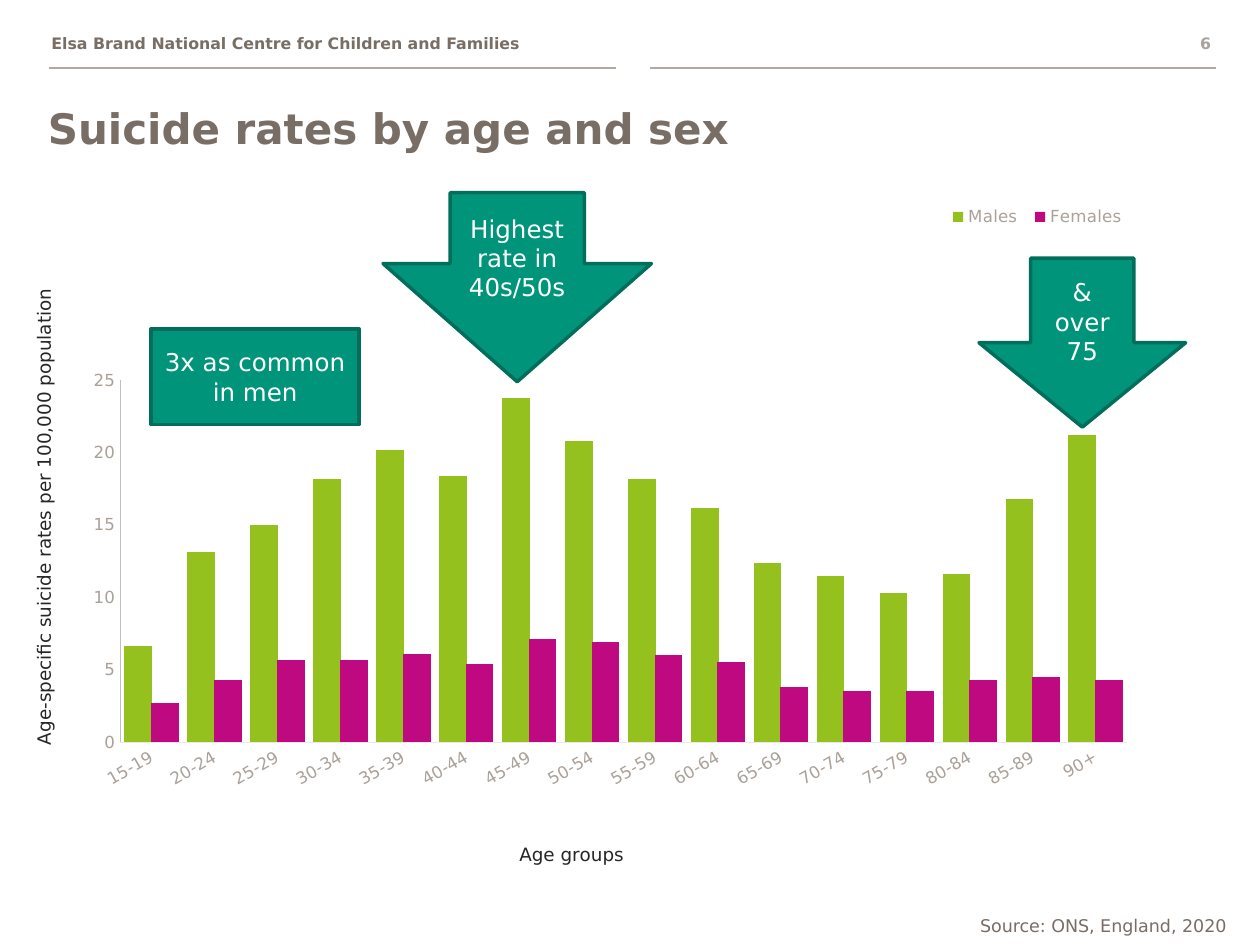
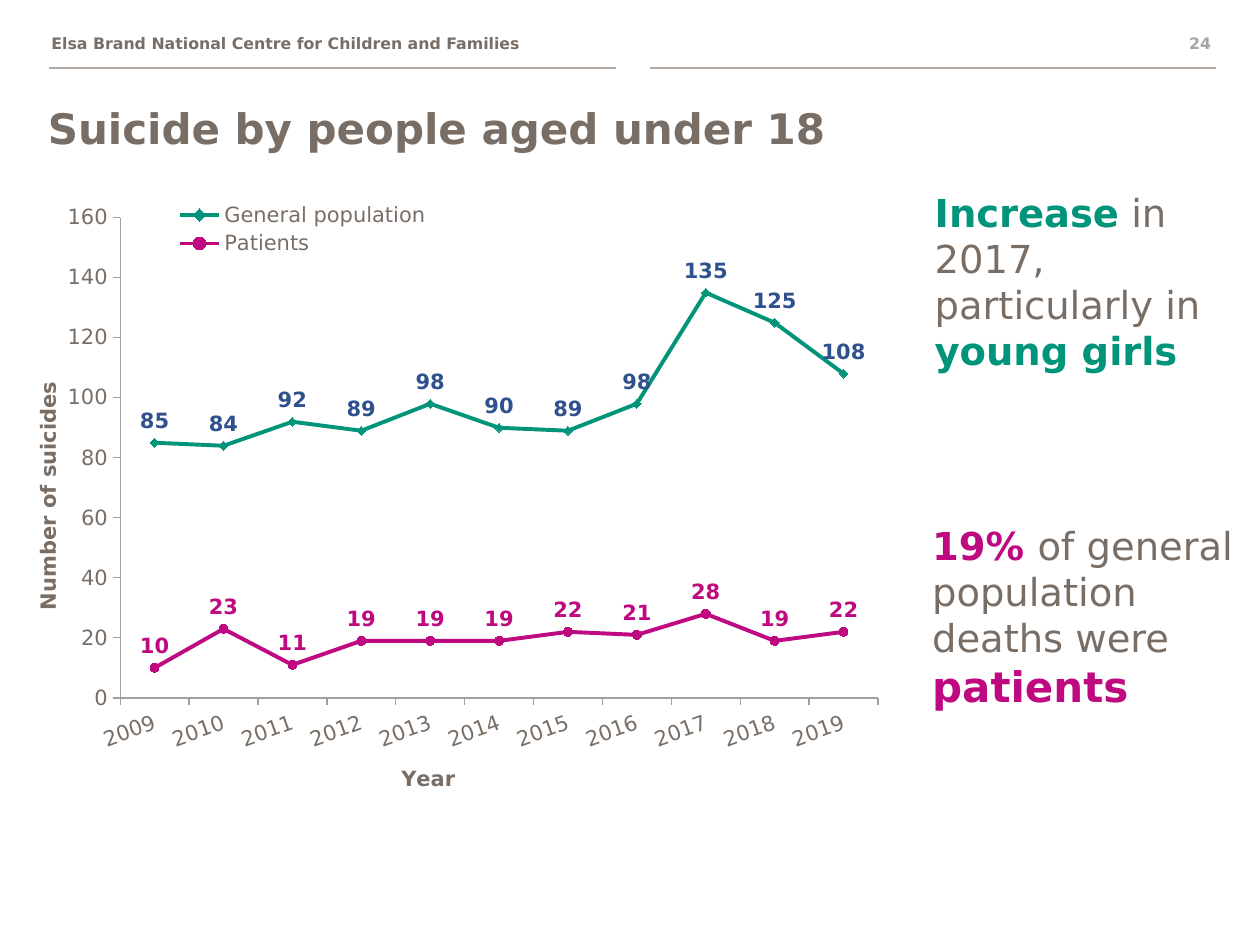
from dataclasses import dataclass

from lxml.etree import SubElement
from pptx import Presentation
from pptx.chart.data import CategoryChartData
from pptx.dml.color import RGBColor
from pptx.enum.chart import (XL_CHART_TYPE, XL_LABEL_POSITION, XL_LEGEND_POSITION,
                             XL_MARKER_STYLE, XL_TICK_MARK)
from pptx.enum.shapes import MSO_CONNECTOR, MSO_SHAPE
from pptx.enum.text import MSO_ANCHOR, PP_ALIGN
from pptx.oxml import parse_xml
from pptx.oxml.ns import nsdecls, qn
from pptx.util import Inches, Pt


@dataclass(frozen=True)
class Theme:
    font: str = "DejaVu Sans"
    text: str = "796E65"
    rule: str = "B0A8A1"
    page_number: str = "A8A39F"
    tick_label: str = "AAA199"
    axis_title: str = "262626"
    pale_axis: str = "EBE9E7"
    value_axis: str = "BFBFBF"
    grey_axis: str = "A0A0A0"
    green: str = "00957A"
    dark_green: str = "006E5A"
    lime: str = "95C11F"
    magenta: str = "BE0980"
    blue: str = "2F528F"
    white: str = "FFFFFF"
    title_size: float = 24
    large_size: float = 24
    message_size: float = 22
    callout_size: float = 14
    line_chart_size: float = 12
    axis_title_size: float = 10.5
    source_size: float = 10
    bar_chart_size: float = 9.5
    header_size: float = 9


THEME = Theme()
ORGANISATION = "Elsa Brand National Centre for Children and Families"


def set_font(font, size, color, bold=False):
    font.name = THEME.font
    font.size = Pt(size)
    font.bold = bold
    font.color.rgb = RGBColor.from_string(color)


def set_line(line, color, width):
    line.color.rgb = RGBColor.from_string(color)
    line.width = Pt(width)


def add_text(slide, box, runs, align=PP_ALIGN.LEFT):
    """Add one wrapped paragraph; each run is (text, size, color, bold)."""
    text_box = slide.shapes.add_textbox(*map(Inches, box))
    text_box.text_frame.word_wrap = True
    paragraph = text_box.text_frame.paragraphs[0]
    paragraph.alignment = align
    for text, *style in runs:
        run = paragraph.add_run()
        run.text = text
        set_font(run.font, *style)


def add_rule(slide, left, right):
    y = Inches(0.54)
    rule = slide.shapes.add_connector(MSO_CONNECTOR.STRAIGHT, Inches(left), y, Inches(right), y)
    set_line(rule.line, THEME.rule, 1)
    SubElement(rule._element.spPr, qn("a:effectLst"))


def add_slide(presentation, title, number):
    """Add a slide with the shared header, page number and title."""
    slide = presentation.slides.add_slide(presentation.slide_layouts[5])
    add_rule(slide, 0.39, 4.89)
    add_rule(slide, 5.16, 9.65)
    add_text(slide, (0.31, 0.22, 4.48, 0.25),
             [(ORGANISATION, THEME.header_size, THEME.text, True)])
    add_text(slide, (9.13, 0.22, 0.58, 0.25),
             [(number, THEME.header_size, THEME.page_number, True)], PP_ALIGN.RIGHT)

    shape = slide.shapes.title
    shape.left, shape.top, shape.width, shape.height = map(Inches, (0.28, 0.76, 9, 0.76))
    shape.text_frame.text = title
    shape.text_frame.vertical_anchor = MSO_ANCHOR.TOP
    paragraph = shape.text_frame.paragraphs[0]
    paragraph.alignment = PP_ALIGN.LEFT
    set_font(paragraph.font, THEME.title_size, THEME.text, True)
    return slide


def add_callout(slide, kind, box, text, adjustments=()):
    shape = slide.shapes.add_shape(kind, *map(Inches, box))
    shape.shadow.inherit = False
    for index, value in enumerate(adjustments):
        shape.adjustments[index] = value
    shape.fill.solid()
    shape.fill.fore_color.rgb = RGBColor.from_string(THEME.green)
    set_line(shape.line, THEME.dark_green, 2)
    shape.text_frame.text = text
    shape.text_frame.word_wrap = True
    shape.text_frame.vertical_anchor = MSO_ANCHOR.MIDDLE
    paragraph = shape.text_frame.paragraphs[0]
    paragraph.alignment = PP_ALIGN.CENTER
    set_font(paragraph.font, THEME.callout_size, THEME.white)


def place_in_chart(element, index, target="", **fractions):
    """Give a chart part a manual layout, as fractions of the chart area."""
    for layout in element.findall(qn("c:layout")):
        element.remove(layout)
    inner = f'<c:layoutTarget val="{target}"/>' if target else ""
    modes = "".join(f'<c:{side}Mode val="edge"/>' for side in "xy")
    values = "".join(f'<c:{name} val="{value}"/>' for name, value in fractions.items())
    element.insert(index, parse_xml(
        f'<c:layout {nsdecls("c")}><c:manualLayout>{inner}{modes}{values}'
        "</c:manualLayout></c:layout>"))


def add_chart(slide, kind, box, categories, series, plot_area):
    data = CategoryChartData()
    data.categories = categories
    for name, values in series.items():
        data.add_series(name, values)
    chart = slide.shapes.add_chart(kind, *map(Inches, box), data).chart
    chart.has_title = False
    set_font(chart.font, THEME.source_size, THEME.text)
    chart.plots[0].vary_by_categories = False
    place_in_chart(chart._chartSpace.chart.plotArea, 0, "inner",
                   **dict(zip("xywh", plot_area)))
    return chart


def format_axis(axis, tick_mark, size, color, line_color, line_width, rotation=0):
    axis.has_major_gridlines = False
    axis.major_tick_mark = tick_mark
    axis.minor_tick_mark = XL_TICK_MARK.NONE
    set_line(axis.format.line, line_color, line_width)
    set_font(axis.tick_labels.font, size, color)
    axis._element.txPr.bodyPr.set("rot", str(rotation * 60000))


def set_scale(axis, maximum, step):
    axis.minimum_scale = 0
    axis.maximum_scale = maximum
    axis.major_unit = step


def title_axis(axis, text, style, x, y, rotation=0):
    frame = axis.axis_title.text_frame
    frame.text = text
    set_font(frame.paragraphs[0].font, *style)
    frame._txBody.bodyPr.set("rot", str(rotation * 60000))
    frame._txBody.bodyPr.set("vert", "horz")
    place_in_chart(axis.axis_title._element, 1, x=x, y=y)


def add_legend(chart, position, size, color, **fractions):
    chart.has_legend = True
    chart.legend.position = position
    chart.legend.include_in_layout = False
    set_font(chart.legend.font, size, color)
    place_in_chart(chart.legend._element, 1, **fractions)


def add_rates_chart(slide):
    ages = [f"{age}-{age + 4}" for age in range(15, 90, 5)] + ["90+"]
    rates = {
        "Males": (6.6, 13.1, 15, 18.2, 20.2, 18.4, 23.8, 20.8,
                  18.2, 16.2, 12.4, 11.5, 10.3, 11.6, 16.8, 21.2),
        "Females": (2.7, 4.3, 5.7, 5.7, 6.1, 5.4, 7.1, 6.9,
                    6, 5.5, 3.8, 3.5, 3.5, 4.3, 4.5, 4.3),
    }
    chart = add_chart(slide, XL_CHART_TYPE.COLUMN_CLUSTERED, (0, 1.56, 9, 5.42),
                      ages, rates, (0.106, 0.269, 0.888, 0.53))
    plot = chart.plots[0]
    plot.gap_width, plot.overlap = 31, 4
    for series, color in zip(plot.series, (THEME.lime, THEME.magenta)):
        series.format.fill.solid()
        series.format.fill.fore_color.rgb = RGBColor.from_string(color)

    labels = THEME.bar_chart_size, THEME.tick_label
    format_axis(chart.category_axis, XL_TICK_MARK.NONE, *labels, THEME.pale_axis, 0.59, -30)
    format_axis(chart.value_axis, XL_TICK_MARK.NONE, *labels, THEME.value_axis, 0.75)
    set_scale(chart.value_axis, 25, 5)
    style = THEME.axis_title_size, THEME.axis_title
    title_axis(chart.category_axis, "Age groups", style, 0.455, 0.94)
    title_axis(chart.value_axis, "Age-specific suicide rates per 100,000 population",
               style, 0.025, 0.13, -90)
    add_legend(chart, XL_LEGEND_POSITION.BOTTOM, *labels, x=0.83, y=0.01, w=0.17, h=0.04)


def add_deaths_chart(slide):
    years = [str(year) for year in range(2009, 2020)]
    deaths = {
        "General population": (85, 84, 92, 89, 98, 90, 89, 98, 135, 125, 108),
        "Patients": (10, 23, 11, 19, 19, 19, 22, 21, 28, 19, 22),
    }
    chart = add_chart(slide, XL_CHART_TYPE.LINE_MARKERS, (0, 1.53, 7.17, 4.82),
                      years, deaths, (0.133, 0.041, 0.839, 0.791))
    size = THEME.line_chart_size
    styles = ((THEME.green, THEME.blue, XL_MARKER_STYLE.DIAMOND),
              (THEME.magenta, THEME.magenta, XL_MARKER_STYLE.CIRCLE))
    for series, (color, label_color, marker) in zip(chart.plots[0].series, styles):
        series.smooth = False
        set_line(series.format.line, color, 2.25)
        series.marker.style = marker
        series.marker.size = 5
        series.marker.format.fill.solid()
        series.marker.format.fill.fore_color.rgb = RGBColor.from_string(color)
        set_line(series.marker.format.line, color, 0.75)
        series.data_labels.show_value = True
        series.data_labels.position = XL_LABEL_POSITION.ABOVE
        set_font(series.data_labels.font, size, label_color, True)

    for axis, rotation in ((chart.category_axis, -20), (chart.value_axis, 0)):
        format_axis(axis, XL_TICK_MARK.OUTSIDE, size, THEME.text, THEME.grey_axis, 0.75, rotation)
    set_scale(chart.value_axis, 160, 20)
    style = size, THEME.text, True
    title_axis(chart.category_axis, "Year", style, 0.44, 0.935)
    title_axis(chart.value_axis, "Number of suicides", style, 0.033, 0.305, -90)
    add_legend(chart, XL_LEGEND_POSITION.RIGHT, size, THEME.text, x=0.17, y=0.01, w=0.33, h=0.1)


def build_rates_slide(presentation):
    slide = add_slide(presentation, "Suicide rates by age and sex", "6")
    add_rates_chart(slide)
    add_callout(slide, MSO_SHAPE.RECTANGLE, (1.2, 2.61, 1.65, 0.76), "3x as common in men")
    add_callout(slide, MSO_SHAPE.DOWN_ARROW, (3.04, 1.53, 2.13, 1.5),
                "Highest rate in 40s/50s", (0.5, 0.625))
    add_callout(slide, MSO_SHAPE.DOWN_ARROW, (7.77, 2.05, 1.64, 1.34), "& over 75")
    add_text(slide, (7.68, 7.21, 2.32, 0.27),
             [("Source: ONS, England, 2020", THEME.source_size, THEME.text)])


def build_deaths_slide(presentation):
    slide = add_slide(presentation, "Suicide by people aged under 18", "24")
    add_deaths_chart(slide)
    size = THEME.message_size
    add_text(slide, (7.3, 4.09, 2.86, 2.02), [
        ("19% ", size, THEME.magenta, True),
        ("of general population deaths were ", size, THEME.text),
        ("patients", THEME.large_size, THEME.magenta, True)])
    add_text(slide, (7.32, 1.45, 2.59, 1.58), [
        ("Increase", size, THEME.green, True),
        (" in 2017, particularly in ", size, THEME.text),
        ("young girls", size, THEME.green, True)])


def main():
    presentation = Presentation()
    presentation.slide_width = Inches(10)
    presentation.slide_height = Inches(7.5)
    build_rates_slide(presentation)
    build_deaths_slide(presentation)
    presentation.save("out.pptx")


if __name__ == "__main__":
    main()
